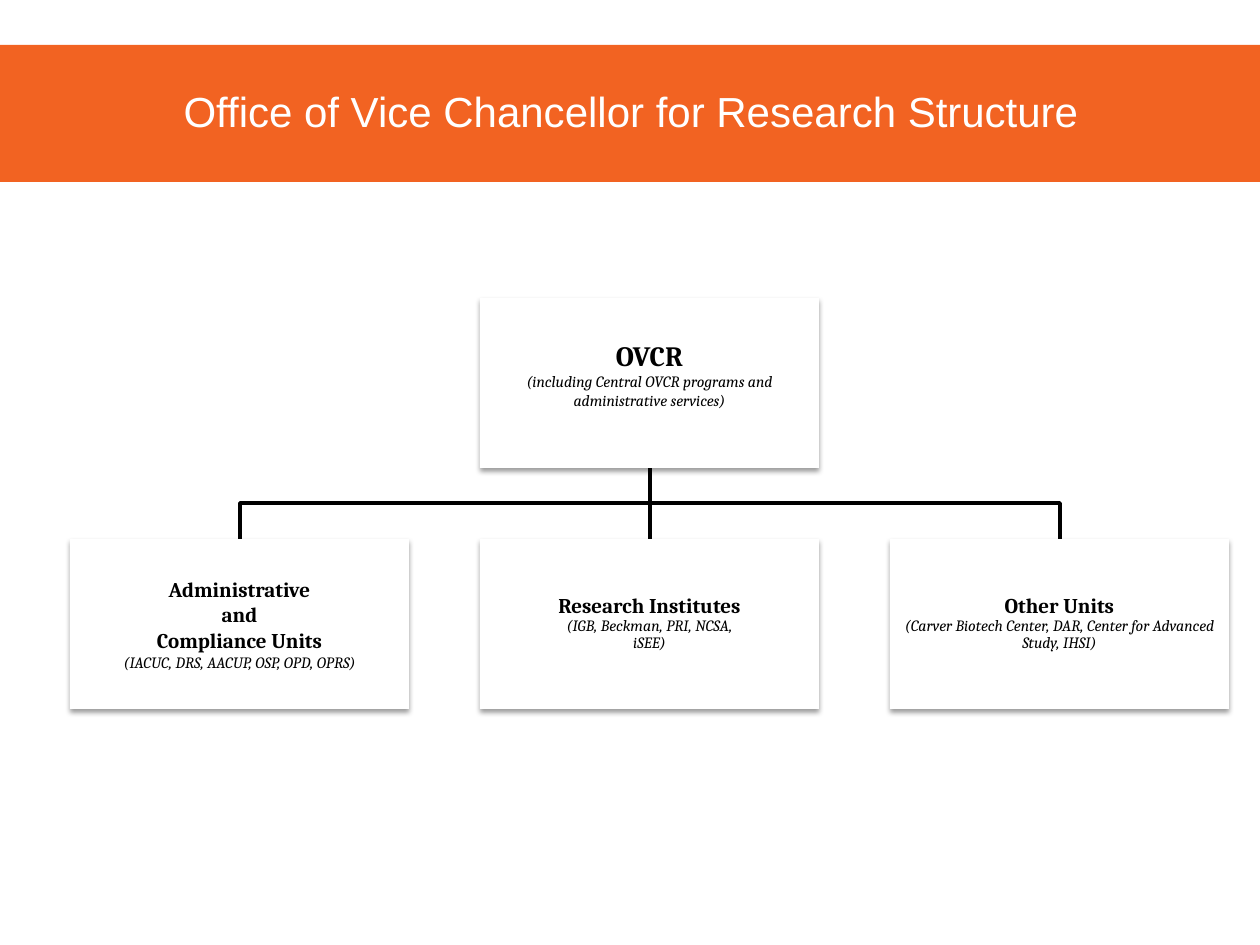
from dataclasses import dataclass

from lxml import etree
from pptx import Presentation
from pptx import util as u
from pptx.dml.color import RGBColor
from pptx.enum import shapes, text
from pptx.oxml.ns import qn

SCALE = 914400 / 126
BOX_W, BOX_H = 339, 170
LEFT, STEP = 70, 410
TOP, LOW = 298, 539
BLACK, WHITE, ORANGE = "000000", "FFFFFF", "F26322"


@dataclass
class Unit:
    col: int
    y: int
    heads: list[str]
    note: str
    size: int = 12
    space: float = 1.0
    foot: int = 1

    @property
    def x(self) -> int:
        return LEFT + STEP * self.col

    @property
    def mid(self) -> int:
        return self.x + BOX_W // 2 + 1


ROOT = Unit(1, TOP, ["OVCR"],
            "(including Central OVCR programs and administrative services)",
            size=16, foot=19)
UNITS = [
    Unit(0, LOW, ["Administrative", "and", "Compliance Units"],
         "(IACUC, DRS, AACUP, OSP, OPD, OPRS)"),
    Unit(1, LOW, ["Research Institutes"],
         "(IGB, Beckman, PRI, NCSA,\viSEE)", space=0.9),
    Unit(2, LOW, ["Other Units"],
         "(Carver Biotech Center, DAR, Center for Advanced Study, IHSI)",
         space=0.9),
]


def px(n: int) -> u.Emu:
    return u.Emu(round(n * SCALE))


def rgb(code: str) -> RGBColor:
    return RGBColor.from_string(code)


def rect(slide, x: int, y: int, w: int, h: int, fill: str):
    shape = slide.shapes.add_shape(shapes.MSO_SHAPE.RECTANGLE,
                                   px(x), px(y), px(w), px(h))
    shape.shadow.inherit = False
    shape.fill.solid()
    shape.fill.fore_color.rgb = rgb(fill)
    shape.line.fill.background()
    return shape


def shade(shape) -> None:
    """Give the shape a soft shadow that falls straight down."""
    glow = shape._element.spPr.find(qn("a:effectLst"))
    drop = etree.SubElement(glow, qn("a:outerShdw"), blurRad=str(u.Pt(3.1)),
                            dist=str(u.Pt(1.6)), dir="5400000", rotWithShape="0")
    tint = etree.SubElement(drop, qn("a:srgbClr"), val=BLACK)
    etree.SubElement(tint, qn("a:alpha"), val="38000")


def style(para, size: int, face: str, code: str,
          bold: bool = False, slant: bool = False) -> None:
    para.alignment = text.PP_ALIGN.CENTER
    font = para.font
    font.size, font.name = u.Pt(size), face
    font.bold, font.italic = bold, slant
    font.color.rgb = rgb(code)


def card(slide, unit: Unit) -> None:
    shape = rect(slide, unit.x, unit.y, BOX_W, BOX_H, WHITE)
    shade(shape)
    frame = shape.text_frame
    frame.word_wrap = True
    frame.vertical_anchor = text.MSO_ANCHOR.MIDDLE
    frame.margin_left = frame.margin_right = frame.margin_top = px(1)
    frame.margin_bottom = px(unit.foot)
    for i, line in enumerate([*unit.heads, unit.note]):
        para = frame.add_paragraph() if i else frame.paragraphs[0]
        para.text = line
        para.line_spacing = unit.space
        head = i < len(unit.heads)
        style(para, unit.size if head else 9, "Cambria", BLACK, head, not head)


def wire(slide, unit: Unit) -> None:
    """Join the root card to a unit: straight below it, else with two bends."""
    start, end = TOP + BOX_H, LOW
    if unit.mid == ROOT.mid:
        line = slide.shapes.add_connector(
            shapes.MSO_CONNECTOR.STRAIGHT,
            px(ROOT.mid), px(start), px(unit.mid), px(end))
        etree.SubElement(line._element.spPr, qn("a:effectLst"))
    else:
        bend = (start + end) // 2
        path = slide.shapes.build_freeform(px(ROOT.mid), px(start))
        path.add_line_segments(
            [(px(ROOT.mid), px(bend)), (px(unit.mid), px(bend)),
             (px(unit.mid), px(end))], close=False)
        line = path.convert_to_shape()
        line.shadow.inherit = False
        line.fill.background()
    line.line.color.rgb = rgb(BLACK)
    line.line.width = u.Pt(2)


def title(slide, words: str) -> None:
    rect(slide, 0, 45, 1260, 137, ORANGE)
    box = slide.shapes.add_textbox(px(1), px(79), px(1260), px(79))
    box.text_frame.word_wrap = True
    para = box.text_frame.paragraphs[0]
    para.text = words
    style(para, 24, "Arial", WHITE)


def main() -> None:
    deck = Presentation()
    deck.slide_width, deck.slide_height = px(1260), px(945)
    slide = deck.slides.add_slide(deck.slide_layouts[6])
    for unit in UNITS:
        wire(slide, unit)
    for unit in [ROOT, *UNITS]:
        card(slide, unit)
    title(slide, "Office of Vice Chancellor for Research Structure")
    deck.save("out.pptx")


if __name__ == "__main__":
    main()
